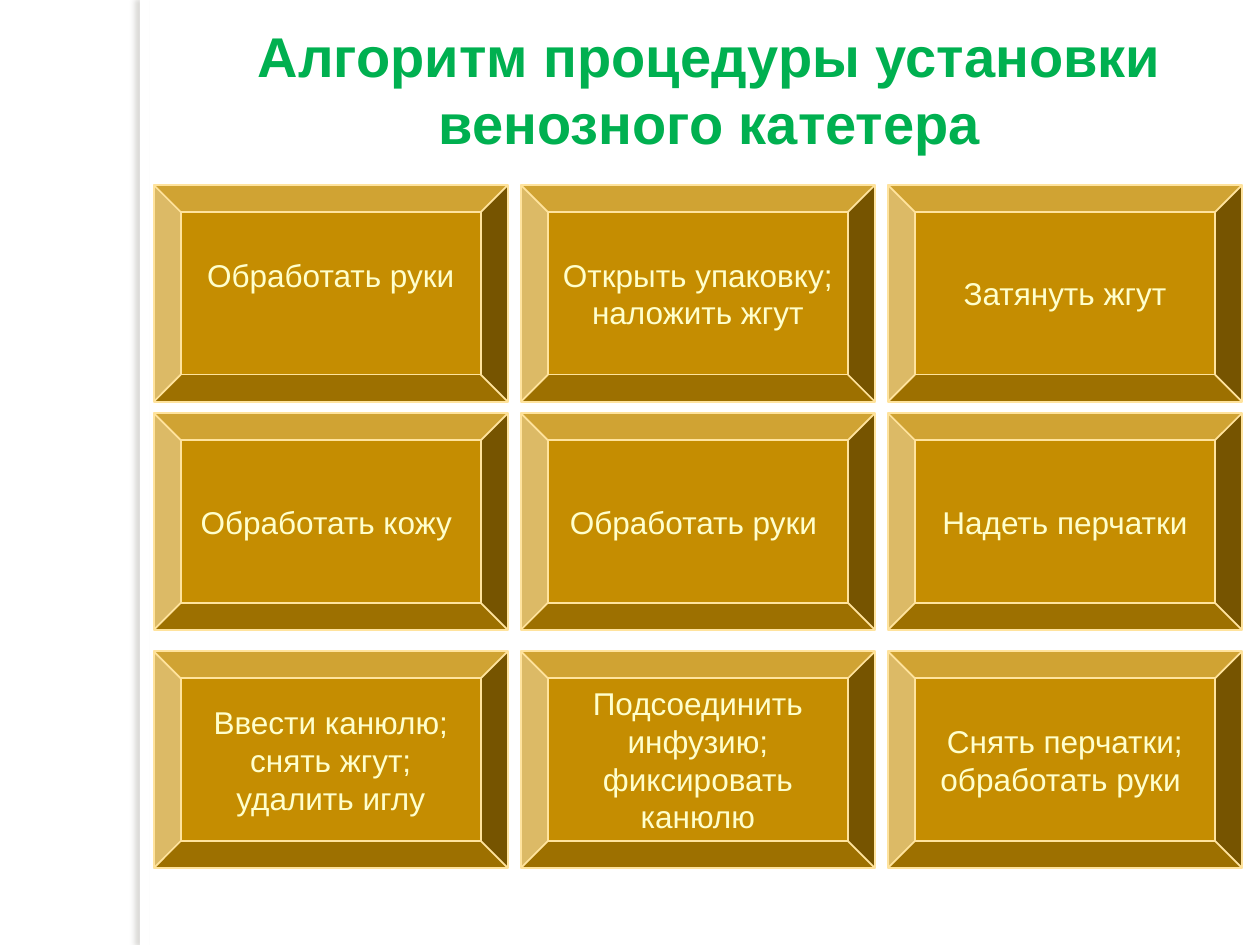
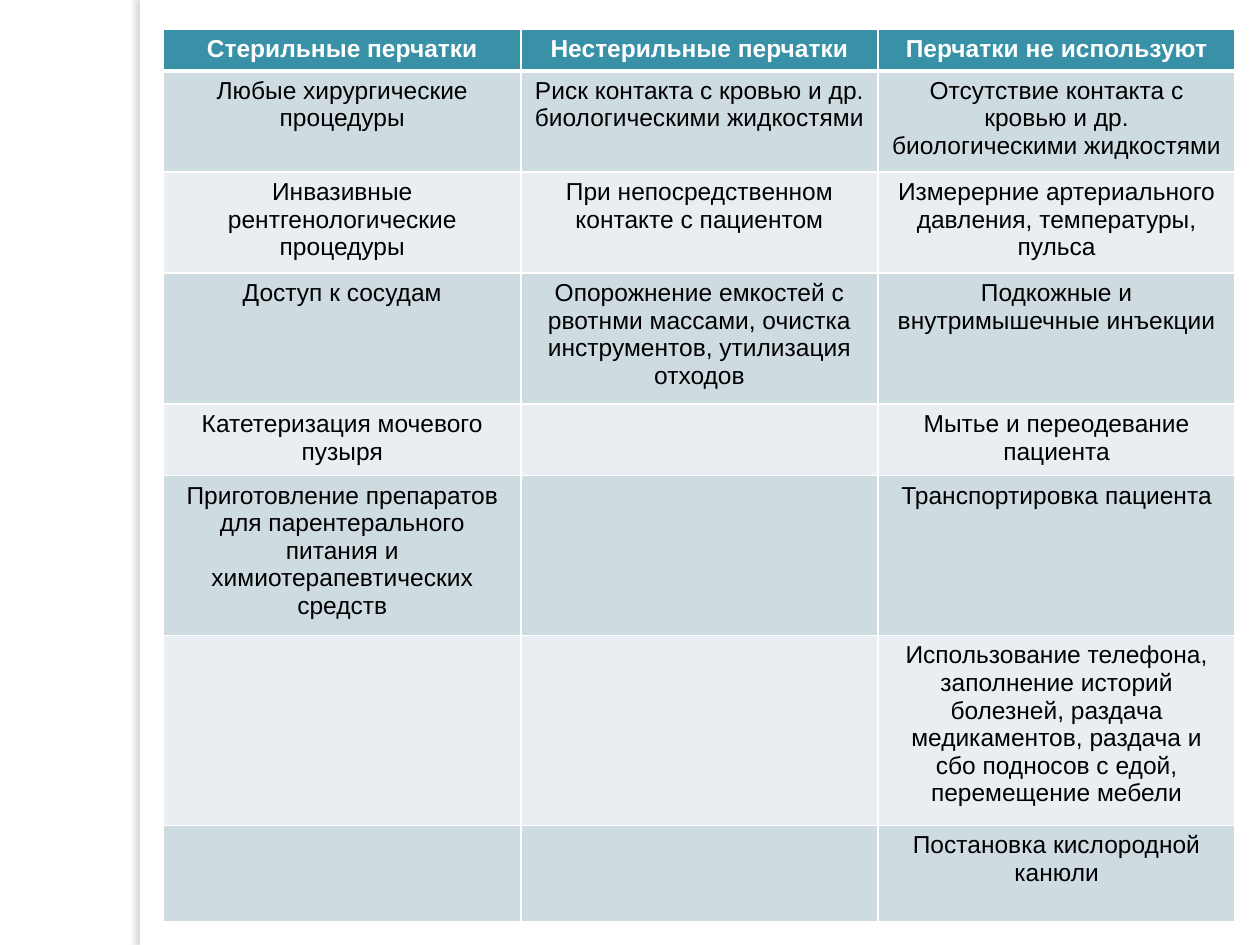
import pptx
import pptx.util
from lxml import etree
from pptx.dml.color import RGBColor
from pptx.enum.shapes import MSO_SHAPE
from pptx.enum.text import MSO_ANCHOR, PP_ALIGN
from pptx.oxml import parse_xml
from pptx.oxml.ns import nsdecls, qn
from pptx.util import Cm, Pt

FONT = "Arial"
WHITE = RGBColor(0xFF, 0xFF, 0xFF)
BLACK = RGBColor(0, 0, 0)
GREEN = RGBColor(0x00, 0xB0, 0x50)
GOLD = RGBColor(0xC5, 0x8D, 0x01)
PALE_GOLD = RGBColor(0xFF, 0xE3, 0x9D)
CREAM = RGBColor(0xFF, 0xFF, 0xCC)
TEAL = RGBColor(0x38, 0x91, 0xA7)
BAND_DARK = RGBColor(0xCE, 0xDC, 0xE1)
BAND_LIGHT = RGBColor(0xE8, 0xEE, 0xF1)

TITLE = "Алгоритм процедуры установки венозного катетера"
STEPS = [
    ["Обработать руки", "Открыть упаковку; наложить жгут", "Затянуть жгут"],
    ["Обработать кожу ", "Обработать руки ", "Надеть перчатки"],
    ["Ввести канюлю; снять жгут; удалить иглу",
     "Подсоединить инфузию; фиксировать канюлю",
     "Снять перчатки;\nобработать руки "],
]
STEP_LEFT, STEP_PITCH = 3.1, 7.4
STEP_TOPS = [3.73, 8.33, 13.13]
STEP_WIDTH, STEP_HEIGHT = 7.14, 4.37

GLOVE_RULES = [
    ["Стерильные перчатки", "Нестерильные перчатки", "Перчатки не используют"],
    ["Любые хирургические процедуры",
     "Риск контакта с кровью и др. биологическими жидкостями",
     "Отсутствие контакта с кровью и др. биологическими жидкостями"],
    ["Инвазивные рентгенологические процедуры",
     "При непосредственном контакте с пациентом",
     "Измерерние артериального давления, температуры, пульса"],
    ["Доступ к сосудам",
     "Опорожнение емкостей с рвотнми массами, очистка инструментов, утилизация отходов",
     "Подкожные и внутримышечные инъекции"],
    ["Катетеризация мочевого пузыря", "", "Мытье и переодевание пациента"],
    ["Приготовление препаратов для парентерального питания и "
     "химиотерапевтических средств", "", "Транспортировка пациента"],
    ["", "", "Использование телефона, заполнение историй болезней, раздача "
     "медикаментов, раздача и сбо подносов с едой, перемещение мебели"],
    ["", "", "Постановка кислородной канюли"],
]
RULE_HEIGHTS = [0.82, 2.04, 2.04, 2.64, 1.43, 3.2, 3.83, 1.95]
RULE_WIDTH = 7.2


def write(frame, text, *, size, color, bold=False):
    frame.word_wrap = True
    for i, line in enumerate(text.split("\n")):
        paragraph = frame.paragraphs[0] if i == 0 else frame.add_paragraph()
        paragraph.alignment = PP_ALIGN.CENTER
        run = paragraph.add_run()
        run.text = line
        run.font.name = FONT
        run.font.size = Pt(size)
        run.font.bold = bold
        run.font.color.rgb = color


def add_side_band(slide):
    """Draw the white strip whose shadow falls to the left."""
    band = slide.shapes.add_shape(MSO_SHAPE.RECTANGLE, Cm(2.82), 0, Cm(0.2), Cm(19.05))
    band.fill.solid()
    band.fill.fore_color.rgb = WHITE
    band.line.fill.background()
    band._element.spPr.append(parse_xml(
        f'<a:effectLst {nsdecls("a")}>'
        '<a:outerShdw blurRad="38100" dist="38100" dir="10800000" algn="tl" rotWithShape="0">'
        '<a:srgbClr val="736F63"><a:alpha val="25000"/></a:srgbClr>'
        '</a:outerShdw></a:effectLst>'))


def add_content_slide(deck):
    slide = deck.slides.add_slide(deck.slide_layouts[6])
    add_side_band(slide)
    return slide


def add_title(slide, text):
    title = slide.shapes.add_textbox(Cm(3.89), Cm(0.71), Cm(20.83), Cm(2.16))
    title.text_frame.vertical_anchor = MSO_ANCHOR.MIDDLE
    write(title.text_frame, text, size=32, color=GREEN, bold=True)


def add_step(slide, text, left, top):
    step = slide.shapes.add_shape(
        MSO_SHAPE.BEVEL, Cm(left), Cm(top), Cm(STEP_WIDTH), Cm(STEP_HEIGHT))
    step.shadow.inherit = False
    step.fill.solid()
    step.fill.fore_color.rgb = GOLD
    step.line.color.rgb = PALE_GOLD
    step.line.width = Pt(1)
    step.text_frame.vertical_anchor = MSO_ANCHOR.MIDDLE
    write(step.text_frame, text, size=18, color=CREAM)
    return step


def set_borders(cell, bottom_width):
    properties = cell._tc.get_or_add_tcPr()
    for side in ("lnL", "lnR", "lnT", "lnB"):
        width = bottom_width if side == "lnB" else 1
        border = etree.SubElement(properties, qn(f"a:{side}"), w=str(Pt(width)))
        fill = etree.SubElement(border, qn("a:solidFill"))
        etree.SubElement(fill, qn("a:srgbClr"), val=str(WHITE))


def add_rules_table(slide):
    table = slide.shapes.add_table(
        len(GLOVE_RULES), 3, Cm(3.3), Cm(0.58),
        Cm(3 * RULE_WIDTH), Cm(sum(RULE_HEIGHTS))).table
    table.horz_banding = False
    for column in table.columns:
        column.width = Cm(RULE_WIDTH)
    for r, (texts, height) in enumerate(zip(GLOVE_RULES, RULE_HEIGHTS)):
        table.rows[r].height = Cm(height)
        header = r == 0
        band = TEAL if header else BAND_DARK if r % 2 else BAND_LIGHT
        for c, text in enumerate(texts):
            cell = table.cell(r, c)
            set_borders(cell, 3 if header else 1)
            cell.fill.solid()
            cell.fill.fore_color.rgb = band
            if text:
                write(cell.text_frame, text, size=14,
                      color=WHITE if header else BLACK, bold=header)


def build_procedure_slide(deck):
    slide = add_content_slide(deck)
    add_title(slide, TITLE)
    for row, (texts, top) in enumerate(zip(STEPS, STEP_TOPS)):
        for column, text in enumerate(texts):
            step = add_step(slide, text, STEP_LEFT + column * STEP_PITCH, top)
            if row == column == 0:
                # The first step sits half a line above the middle
                step.text_frame.margin_bottom = Cm(0.86)


def main():
    deck = pptx.Presentation()
    deck.slide_width, deck.slide_height = Cm(25.4), Cm(19.05)
    build_procedure_slide(deck)
    add_rules_table(add_content_slide(deck))
    deck.save("out.pptx")


if __name__ == "__main__":
    main()
